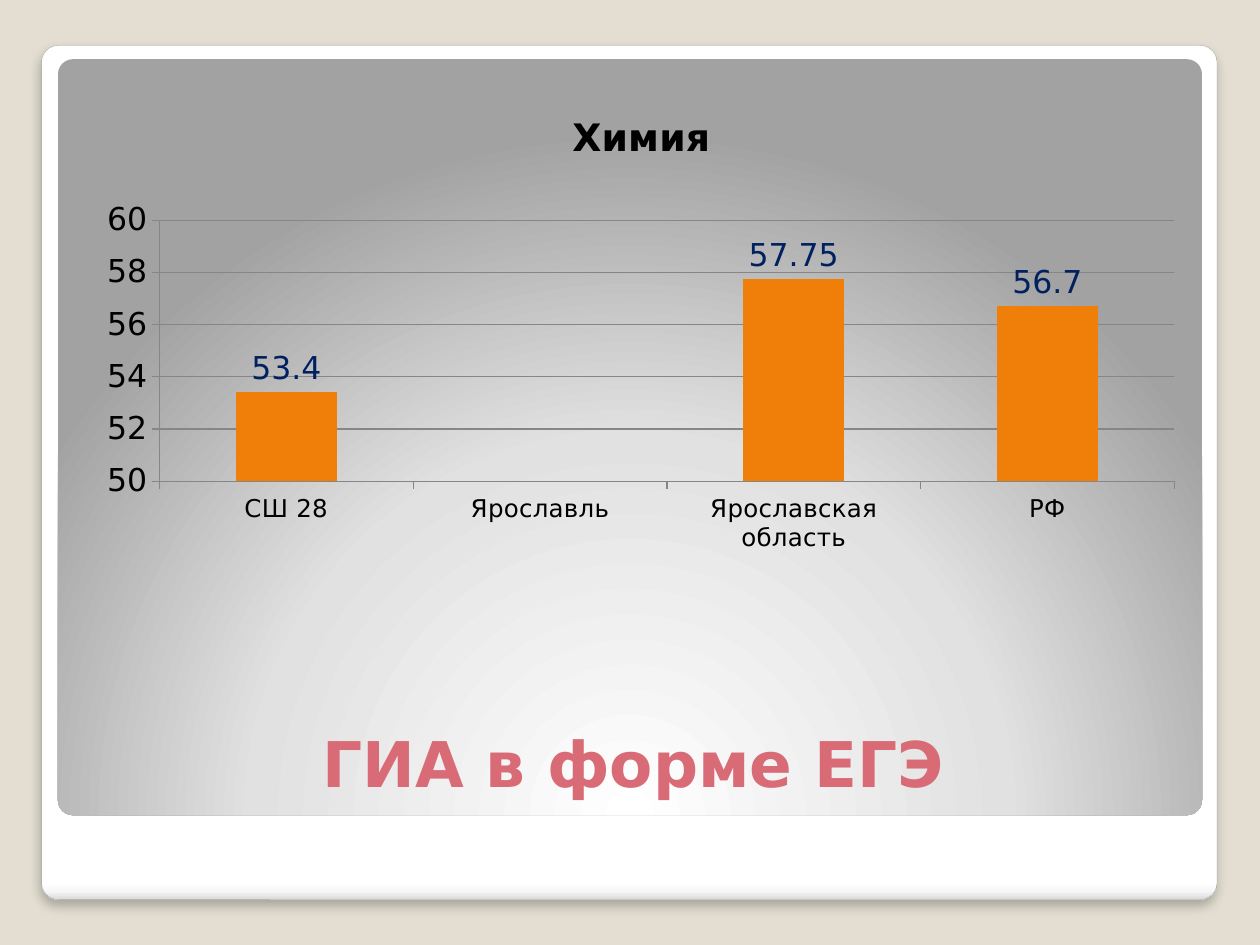
from lxml import etree
from pptx import Presentation, util as u
from pptx.chart.data import CategoryChartData
from pptx.dml.color import RGBColor
from pptx.enum import chart as ch, shapes, text
from pptx.oxml.ns import qn

FONT = "DejaVu Sans"
TITLE = "ГИА в форме ЕГЭ"
HEAD = "Химия"
SCORES = {"СШ 28": 53.4, "Ярославль": None, "Ярославская область": 57.75, "РФ": 56.7}
CARD = [(0, "FFFFFF"), (98, "FFFFFF"), (99, "F7F7F7"), (100, "DADADA")]
PANEL = [(0, "FFFFFF"), (55, "E1E1E1"), (100, "A2A2A2")]
LEFT, WIDE = 0.55, 8.95


def color(hex):
    return RGBColor.from_string(hex)


def style(font, size, hex="000000", bold=False):
    font.name, font.size, font.bold = FONT, u.Pt(size), bold
    font.color.rgb = color(hex)


def write(frame, words, align=text.PP_ALIGN.CENTER, **form):
    para = frame.paragraphs[0]
    para.alignment = align
    run = para.add_run()
    run.text = words
    style(run.font, **form)


def node(base, tag, **attrs):
    return etree.SubElement(base, qn(tag), {k: str(v) for k, v in attrs.items()})


def tint(base, hex):
    return node(base, "a:srgbClr", val=hex)


def card(slide, box, stops):
    """Add a rounded box with gradient stops and return it with its gradient node."""
    shape = slide.shapes.add_shape(
        shapes.MSO_SHAPE.ROUNDED_RECTANGLE, *map(u.Inches, box))
    shape.adjustments[0] = 0.02
    shape.shadow.inherit = False
    shape.line.fill.background()
    shape.fill.gradient()
    grad = shape._element.spPr.find(qn("a:gradFill"))
    for child in list(grad):
        grad.remove(child)
    row = node(grad, "a:gsLst")
    for pos, hex in stops:
        tint(node(row, "a:gs", pos=pos * 1000), hex)
    return shape, grad


def place(base, **parts):
    """Give a chart part a manual layout, in shares of the chart."""
    layout = base.find(qn("c:layout"))
    if layout is None:
        layout = etree.Element(qn("c:layout"))
        base.insert(1 if base.find(qn("c:tx")) is not None else 0, layout)
    hand = node(layout, "c:manualLayout")
    if "w" in parts:
        node(hand, "c:layoutTarget", val="inner")
    for key in "xy":
        node(hand, f"c:{key}Mode", val="edge")
    for key, val in parts.items():
        node(hand, f"c:{key}", val=val)


def backdrop(slide):
    back = slide.background.fill
    back.solid()
    back.fore_color.rgb = color("E3DED1")

    outer, grad = card(slide, (0.33, 0.36, 9.33, 6.78), CARD)
    node(grad, "a:lin", ang=90 * 60000, scaled=0)
    outer.line.color.rgb = color("A4A4A4")
    outer.line.width = u.Pt(0.16)
    shade = node(outer._element.spPr.find(qn("a:effectLst")), "a:outerShdw",
                 blurRad=u.Pt(6), dist=u.Pt(4), dir=90 * 60000, rotWithShape=0)
    node(tint(shade, "000000"), "a:alpha", val=25000)

    _, grad = card(slide, (0.46, 0.47, 9.08, 6), PANEL)
    node(node(grad, "a:path", path="circle"), "a:fillToRect",
         l=50000, t=175000, r=50000, b=-75000)


def heading(slide):
    title = slide.shapes.title
    title.left, title.top, title.width, title.height = map(
        u.Inches, (LEFT, 5.23, WIDE, 1.17))
    frame = title.text_frame
    frame.auto_size = text.MSO_AUTO_SIZE.NONE
    frame.vertical_anchor = text.MSO_ANCHOR.BOTTOM
    write(frame, TITLE, size=36, hex="D96B77", bold=True)
    slide.shapes._spTree.append(title._element)


def graph(slide):
    data = CategoryChartData()
    data.categories = list(SCORES)
    data.add_series("Series 1", list(SCORES.values()))
    chart = slide.shapes.add_chart(
        ch.XL_CHART_TYPE.COLUMN_CLUSTERED,
        *map(u.Inches, (LEFT, 0.58, WIDE, 4.97)), data).chart
    style(chart.font, 18)
    chart.has_legend = False
    chart.has_title = True
    write(chart.chart_title.text_frame, HEAD, size=21.6, bold=True)
    place(chart.chart_title._element, x=0.44, y=0.05)
    place(chart._chartSpace.chart.plotArea, x=0.08, y=0.235, w=0.9, h=0.417)

    for axis, size in ((chart.category_axis, 14), (chart.value_axis, 18)):
        style(axis.tick_labels.font, size)
        axis.major_tick_mark = ch.XL_TICK_MARK.OUTSIDE
        axis.format.line.color.rgb = color("868686")
    scale = chart.value_axis
    scale.minimum_scale, scale.maximum_scale, scale.major_unit = 50, 60, 2
    scale.has_major_gridlines = True
    scale.major_gridlines.format.line.color.rgb = color("868686")

    plot = chart.plots[0]
    plot.gap_width = 150
    plot.vary_by_categories = False
    bars = plot.series[0]
    bars.format.fill.solid()
    bars.format.fill.fore_color.rgb = color("F07F09")
    labels = bars.data_labels
    labels.show_value = True
    labels.position = ch.XL_LABEL_POSITION.OUTSIDE_END
    style(labels.font, 18, "002060")


def main():
    deck = Presentation()
    deck.slide_width, deck.slide_height = u.Inches(10), u.Inches(7.5)
    slide = deck.slides.add_slide(deck.slide_layouts[5])
    backdrop(slide)
    heading(slide)
    graph(slide)
    deck.save("out.pptx")


if __name__ == "__main__":
    main()
